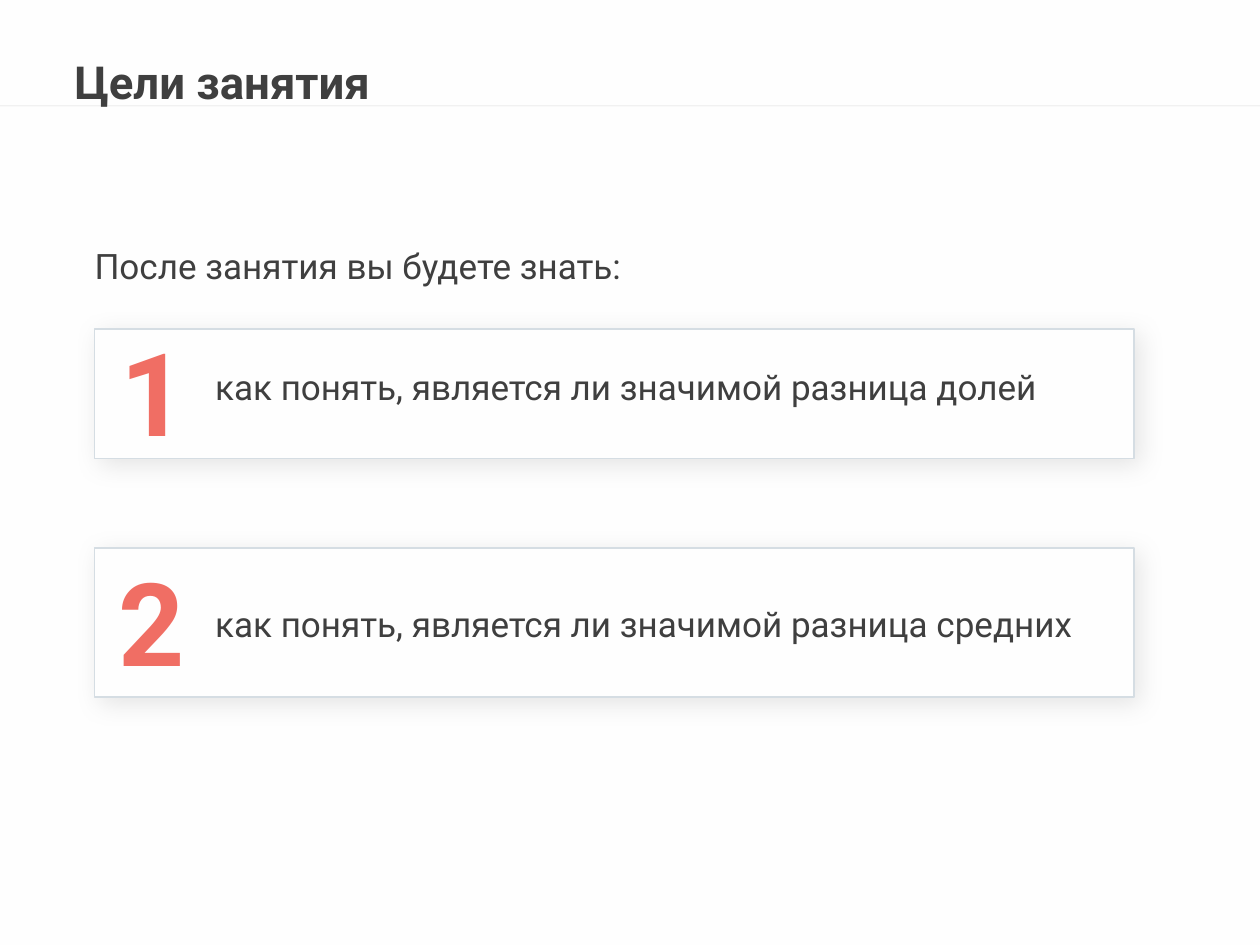
from dataclasses import dataclass

from lxml import etree
from pptx import Presentation
from pptx import util as u
from pptx.dml.color import RGBColor
from pptx.enum import shapes, text
from pptx.oxml import ns


@dataclass(frozen=True)
class Theme:
    """Colours, font and type sizes of the slide."""
    back: str = "FEFEFE"
    white: str = "FFFFFF"
    ink: str = "3F3F3F"
    red: str = "F06E64"
    edge: str = "D5DDE3"
    rule: str = "7F7F7F"
    shade: str = "000000"
    font: str = "Roboto"
    head: int = 26
    body: int = 20
    mark: int = 66


T = Theme()
INSET = (0.1, 0.05, 0.1, 0.05)
GOALS = [
    ("1", "как понять, является ли значимой разница долей",
     (0.75, 2.61, 8.25, 1.03), (0.96, 2.54, 0.87, 1.11), (1.61, 2.85, 7.55, 0.94)),
    ("2", "как понять, является ли значимой разница средних",
     (0.75, 4.35, 8.25, 1.18), (0.94, 4.37, 0.87, 1.11), (1.61, 4.73, 7.08, 1.11)),
]


def rgb(code):
    """Turn a hex code into a colour."""
    return RGBColor.from_string(code)


def place(at):
    """Turn a box in inches into lengths."""
    return [u.Inches(n) for n in at]


def child(node, tag, **attrs):
    """Add a drawing element below a node."""
    return etree.SubElement(node, ns.qn(tag), attrs)


def fade(node, cent):
    """Set the opacity of the solid colour below a node."""
    tint = next(node.iter(ns.qn("a:srgbClr")))
    child(tint, "a:alpha", val=str(cent * 1000))


def write(frame, words, size, color, bold=False, inset=(0, 0, 0, 0),
          anchor=text.MSO_ANCHOR.MIDDLE):
    """Fill a text frame with one formatted line."""
    frame.text = words
    frame.word_wrap = True
    frame.auto_size = text.MSO_AUTO_SIZE.NONE
    frame.vertical_anchor = anchor
    (frame.margin_left, frame.margin_top,
     frame.margin_right, frame.margin_bottom) = place(inset)
    line = frame.paragraphs[0]
    line.alignment = text.PP_ALIGN.LEFT
    font = line.runs[0].font
    font.name, font.size, font.bold = T.font, u.Pt(size), bold
    font.color.rgb = rgb(color)
    return line


def label(slide, at, words, size, color, **look):
    """Add a text box."""
    box = slide.shapes.add_textbox(*place(at))
    write(box.text_frame, words, size, color, **look)


def block(slide, at, fill):
    """Add a plain filled rectangle."""
    box = slide.shapes.add_shape(shapes.MSO_SHAPE.RECTANGLE, *place(at))
    box.shadow.inherit = False
    box.fill.solid()
    box.fill.fore_color.rgb = rgb(fill)
    box.line.fill.background()
    return box


def band(slide):
    """Add the pale top band and its hairline."""
    box = block(slide, (0, 0, 10, 0.84), T.white)
    fade(box._element.spPr, 50)
    rule = slide.shapes.add_connector(
        shapes.MSO_CONNECTOR.STRAIGHT, *place((0, 0.84, 10, 0.84)))
    rule.line.width = u.Pt(0.75)
    rule.line.color.rgb = rgb(T.rule)
    fade(rule._element.spPr, 10)
    child(rule._element.spPr, "a:effectLst")


def card(slide, at):
    """Add an outlined card with a soft shadow."""
    box = block(slide, at, T.back)
    box.line.color.rgb = rgb(T.edge)
    box.line.width = u.Pt(1)
    glow = child(box._element.spPr.find(ns.qn("a:effectLst")), "a:outerShdw",
                 blurRad=str(u.Pt(15)), dist=str(u.Pt(3)),
                 dir=str(45 * 60000), algn="tl", rotWithShape="0")
    child(glow, "a:srgbClr", val=T.shade)
    fade(glow, 10)


def title(slide, words):
    """Format the title and bring it in front of the band."""
    head = slide.shapes.title
    head.left, head.top, head.width, head.height = place((0.59, 0.52, 7.24, 0.33))
    write(head.text_frame, words, T.head, T.ink, bold=True).line_spacing = 0.8
    slide.shapes._spTree.append(head._element)


def main():
    """Build and save the slide."""
    deck = Presentation()
    deck.slide_width, deck.slide_height = place((10, 7.5))
    slide = deck.slides.add_slide(deck.slide_layouts[5])
    slide.background.fill.solid()
    slide.background.fill.fore_color.rgb = rgb(T.back)
    band(slide)
    label(slide, (0.75, 1.94, 8.25, 0.34), "После занятия вы будете знать:",
          T.body, T.ink)
    for mark, goal, frame, left, right in GOALS:
        card(slide, frame)
        label(slide, left, mark, T.mark, T.red, bold=True)
        label(slide, right, goal, T.body, T.ink, inset=INSET,
              anchor=text.MSO_ANCHOR.TOP)
    title(slide, "Цели занятия")
    deck.save("out.pptx")


if __name__ == "__main__":
    main()
